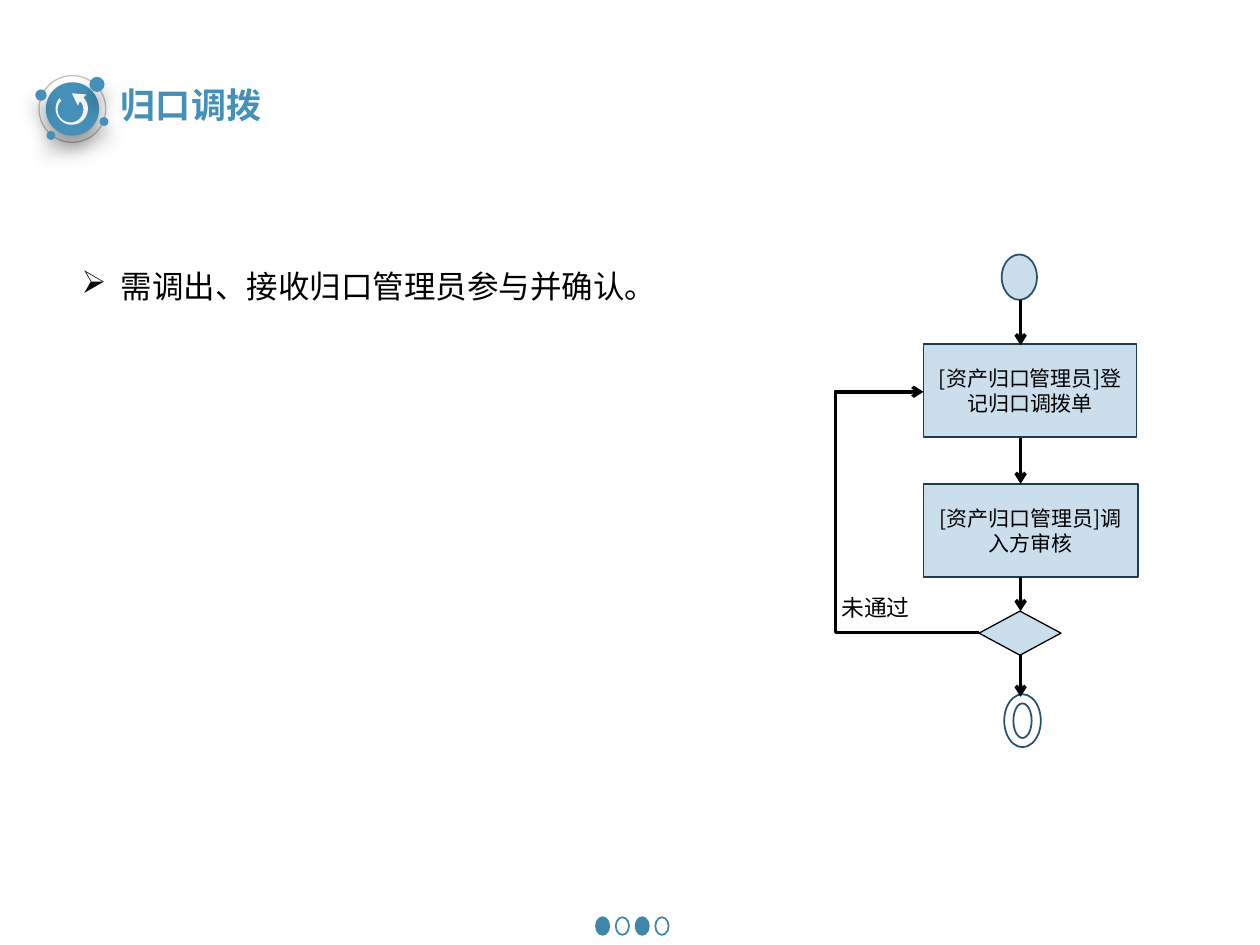
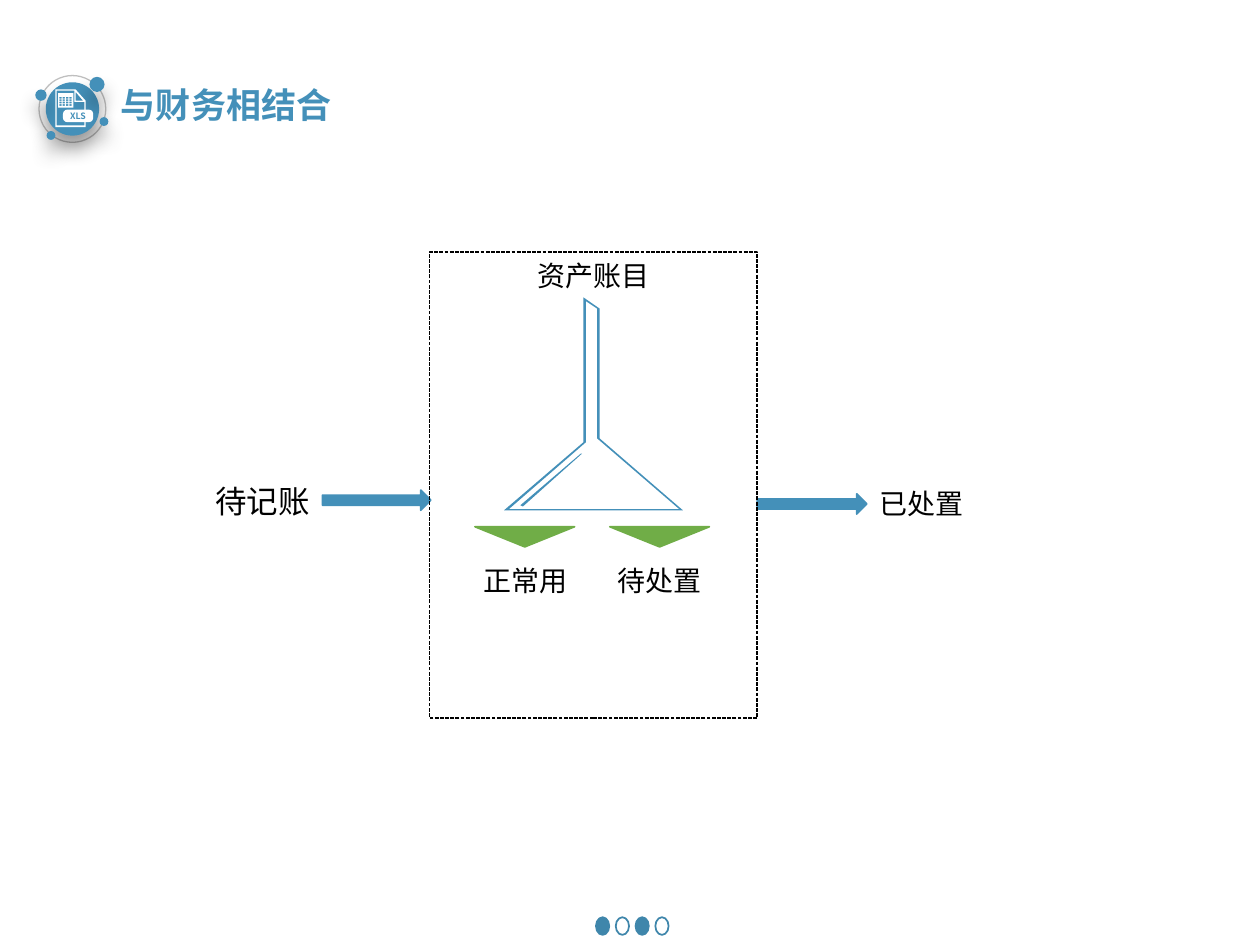
from dataclasses import dataclass
from math import cos, radians, sin

from lxml import etree
from pptx import Presentation
from pptx.dml.color import RGBColor
from pptx.enum.dml import MSO_LINE
from pptx.enum.shapes import MSO_CONNECTOR, MSO_SHAPE
from pptx.enum.text import MSO_ANCHOR, PP_ALIGN
from pptx.oxml.ns import qn
from pptx.util import Inches, Pt

COLS, ROWS = 100, 75
SLIDE_W, SLIDE_H = Inches(10), Inches(7.5)
FONT = "Noto Sans CJK SC"

BLACK = RGBColor(0x00, 0x00, 0x00)
WHITE = RGBColor(0xFF, 0xFF, 0xFF)
OFF_WHITE = RGBColor(0xF3, 0xF3, 0xF3)
GREY = RGBColor(0xBF, 0xBF, 0xBF)
BLUE = RGBColor(0x44, 0x90, 0xB9)
DOT_BLUE = RGBColor(0x3F, 0x86, 0xAB)
PALE_BLUE = RGBColor(0xCA, 0xDE, 0xEC)
NAVY = RGBColor(0x1D, 0x3B, 0x51)
STEEL = RGBColor(0x27, 0x50, 0x6E)
GREEN = RGBColor(0x70, 0xAD, 0x47)

OVAL, RECT, DIAMOND = MSO_SHAPE.OVAL, MSO_SHAPE.RECTANGLE, MSO_SHAPE.DIAMOND
DONUT, TRIANGLE = MSO_SHAPE.DONUT, MSO_SHAPE.ISOSCELES_TRIANGLE
ARROW, ROUNDED = MSO_SHAPE.RIGHT_ARROW, MSO_SHAPE.ROUNDED_RECTANGLE
STRAIGHT, ELBOW = MSO_CONNECTOR.STRAIGHT, MSO_CONNECTOR.ELBOW
LEFT, CENTER = PP_ALIGN.LEFT, PP_ALIGN.CENTER
TOP, MIDDLE = MSO_ANCHOR.TOP, MSO_ANCHOR.MIDDLE
SHORT_DASH = MSO_LINE.SQUARE_DOT

Point = tuple[float, float]


def col(n: float) -> int:
    return round(n * SLIDE_W / COLS)


def row(n: float) -> int:
    return round(n * SLIDE_H / ROWS)


@dataclass(frozen=True)
class Box:
    """A rectangle in grid columns and rows."""
    x: float
    y: float
    w: float
    h: float

    def place(self) -> tuple[int, int, int, int]:
        return col(self.x), row(self.y), col(self.w), row(self.h)

    def corners(self) -> list[Point]:
        right, bottom = self.x + self.w, self.y + self.h
        return [(self.x, self.y), (right, self.y), (right, bottom), (self.x, bottom)]


@dataclass(frozen=True)
class Label:
    text: str
    box: Box
    size: float = 16
    align: PP_ALIGN = CENTER
    wrap: bool = False


BADGE_SATELLITES = [Box(7.1, 6.1, 1.2, 1.2), Box(2.8, 7.1, 0.9, 0.9),
                    Box(3.7, 10.4, 0.7, 0.7), Box(7.9, 9.3, 0.7, 0.7)]
STEPS = [Label("[资产归口管理员]登记归口调拨单", Box(73.3, 27.3, 16.9, 7.4), 12),
         Label("[资产归口管理员]调入方审核", Box(73.3, 38.4, 17, 7.4), 12)]
STEP_ARROWS = [(23.8, 27.4), (34.8, 38.4), (45.8, 48.5), (51.9, 55.3)]
ACCOUNT_LABELS = [
    Label("待记账", Box(16.1, 37.8, 9.5, 4), 18),
    Label("已处置", Box(68.8, 38.1, 8.7, 3.7)),
    Label("资产账目", Box(41.7, 20, 12.5, 3.7), align=LEFT, wrap=True),
    Label("正常用", Box(36.7, 44.2, 10, 3.7), wrap=True),
    Label("待处置", Box(48, 44.2, 8.7, 3.7)),
]
SCALE_OUTLINE = [
    [(54.2, 40.5), (40, 40.5), (46.3, 35.1), (46.3, 23.6), (47.6, 24.5), (47.6, 34.8)],
    [(53.9, 40.4), (47.4, 34.8), (47.4, 24.5), (46.5, 23.9), (46.5, 35.1), (40.4, 40.4)],
    [(41.5, 40.2), (41.3, 40.1), (46.1, 36), (46.2, 36)],
]


def write(tf, text: str, *, size: float, color=BLACK, bold=False, align=LEFT,
          anchor=TOP, wrap=True, bullet: str = "", spacing: float = 1.0):
    tf.word_wrap = wrap
    tf.vertical_anchor = anchor
    p = tf.paragraphs[0]
    if bullet:
        pPr = p._p.get_or_add_pPr()
        pPr.set("marL", str(Inches(0.31)))
        pPr.set("indent", str(-Inches(0.31)))
        etree.SubElement(pPr, qn("a:buChar"), char=bullet)
    p.alignment = align
    p.line_spacing = spacing
    r = p.add_run()
    r.text = text
    r.font.size, r.font.bold = Pt(size), bold
    r.font.color.rgb = color
    r.font.name = FONT
    etree.SubElement(r.font._element, qn("a:ea"), typeface=FONT)


def add_label(slide, label: Label, **style):
    sp = slide.shapes.add_textbox(*label.box.place())
    write(sp.text_frame, label.text, size=label.size, align=label.align,
          wrap=label.wrap, **style)


def paint(sp, fill=None, line=None, width: float = 1):
    sp.shadow.inherit = False
    if fill is None:
        sp.fill.background()
    else:
        sp.fill.solid()
        sp.fill.fore_color.rgb = fill
    if line is None:
        sp.line.fill.background()
    else:
        sp.line.color.rgb = line
        sp.line.width = Pt(width)


def add_shape(slide, kind, box: Box, **style):
    sp = slide.shapes.add_shape(kind, *box.place())
    paint(sp, **style)
    return sp


def add_outline(slide, contours: list[list[Point]], fill):
    """Fill closed contours; a contour inside another cuts a hole."""
    paths = [[(col(x), row(y)) for x, y in contour] for contour in contours]
    builder = slide.shapes.build_freeform(*paths[0][0])
    for i, (start, *rest) in enumerate(paths):
        if i:
            builder.move_to(*start)
        builder.add_line_segments(rest, close=True)
    paint(builder.convert_to_shape(), fill=fill)


def drop_shadow(sp):
    effects = sp.element.spPr.find(qn("a:effectLst"))
    shadow = etree.SubElement(effects, qn("a:outerShdw"), blurRad=str(Pt(11)),
                              dist=str(Pt(8)), dir="5400000", algn="t", rotWithShape="0")
    color = etree.SubElement(shadow, qn("a:srgbClr"), val=str(BLACK))
    etree.SubElement(color, qn("a:alpha"), val="40000")


def add_arrow(slide, start: Point, end: Point, kind=STRAIGHT, bend: float = 0):
    """Draw a hairline arrow; bend is the elbow's place as a share of its width."""
    line = slide.shapes.add_connector(kind, col(start[0]), row(start[1]),
                                      col(end[0]), row(end[1]))
    line.line.color.rgb = BLACK
    line.line.width = Pt(0)
    spPr = line._element.spPr
    etree.SubElement(spPr.find(qn("a:ln")), qn("a:tailEnd"), type="arrow")
    etree.SubElement(spPr, qn("a:effectLst"))
    if bend:
        guides = spPr.find(qn("a:prstGeom")).find(qn("a:avLst"))
        etree.SubElement(guides, qn("a:gd"), name="adj1", fmla=f"val {round(bend * 100000)}")


def add_footer_dots(slide, layout):
    """Put the four page dots on the layout, so every slide shows them."""
    for i in range(4):
        dot = add_shape(slide, OVAL, Box(47.3 + 1.57 * i, 72.8, 1.05, 1.4),
                        fill=None if i % 2 else DOT_BLUE, line=DOT_BLUE)
        layout.shapes.element.append(dot.element)


def add_heading(slide, text: str, width: float):
    title = slide.shapes.title
    title.left, title.top, title.width, title.height = Box(8.6, 6.1, width, 4.4).place()
    write(title.text_frame, text, size=20, color=BLUE, bold=True, wrap=False)
    add_shape(slide, OVAL, Box(3.1, 6, 5.3, 5.3), line=GREY, width=0.75)
    drop_shadow(add_shape(slide, OVAL, Box(3.7, 6.6, 4.1, 4.1), fill=BLUE, line=BLUE))
    for box in BADGE_SATELLITES:
        drop_shadow(add_shape(slide, OVAL, box, fill=BLUE))


def arc(cx: float, cy: float, radius: float, start: int, end: int) -> list[Point]:
    step = 6 if end > start else -6
    return [(cx + radius * cos(radians(a)), cy + radius * sin(radians(a)))
            for a in range(start, end, step)]


def add_cycle_icon(slide):
    ring = arc(5.7, 8.62, 1.28, -43, 224) + arc(5.6, 8.7, 1.02, 223, -36)
    head = [(6.3, 8.1), (6.2, 8.4), (5.7, 7.4), (6.85, 7.5)]
    add_outline(slide, [ring + head], OFF_WHITE)


def add_sheet_icon(slide):
    page = [(4.4, 7.1), (6, 7.1), (6.8, 8), (6.8, 10.1), (4.4, 10.1)]
    inside = [(4.5, 7.2), (5.9, 7.2), (5.9, 8.1), (6.7, 8.1), (6.7, 9.95), (4.5, 9.95)]
    fold = [(6, 7.3), (6, 8), (6.6, 8)]
    table = Box(4.62, 7.4, 1.2, 1.15).corners()
    cells = [Box(4.72 + 0.26 * c, 7.7 + 0.19 * r, 0.18, 0.13).corners()
             for r in range(4) for c in range(4)]
    add_outline(slide, [page, inside, fold, table, *cells], WHITE)
    tag = add_shape(slide, ROUNDED, Box(5, 8.7, 2.4, 1), fill=WHITE)
    tag.adjustments[0] = 0.35
    tf = tag.text_frame
    tf.margin_left = tf.margin_right = tf.margin_top = tf.margin_bottom = 0
    write(tf, "XLS", size=5, color=BLUE, bold=True, align=CENTER, anchor=MIDDLE, wrap=False)


def build_transfer_slide(slide):
    add_heading(slide, "归口调拨", 13.2)
    add_cycle_icon(slide)
    note = Label("需调出、接收归口管理员参与并确认。", Box(5.5, 17.7, 58.9, 7.1), 18, LEFT, True)
    add_label(slide, note, bullet="➢", spacing=2.0)
    add_shape(slide, OVAL, Box(79.5, 20.2, 2.8, 3.6), fill=PALE_BLUE, line=STEEL)
    for step in STEPS:
        sp = add_shape(slide, RECT, step.box, fill=PALE_BLUE, line=NAVY)
        write(sp.text_frame, step.text, size=step.size, align=CENTER, anchor=MIDDLE)
    add_shape(slide, DIAMOND, Box(77.7, 48.5, 6.5, 3.5), fill=PALE_BLUE, line=BLACK, width=0.75)
    add_shape(slide, DONUT, Box(79.7, 55.1, 2.9, 4.2), line=STEEL)
    for top, bottom in STEP_ARROWS:
        add_arrow(slide, (81, top), (81, bottom))
    add_arrow(slide, (77.7, 50.2), (73.3, 31.1), ELBOW, bend=2.59)
    add_label(slide, Label("未通过", Box(65.8, 46.6, 10.1, 3.2), 13, LEFT, True))


def build_finance_slide(slide):
    add_heading(slide, "与财务相结合", 18.8)
    add_sheet_icon(slide)
    for box in (Box(25.6, 38.9, 8.6, 1.6), Box(60.1, 39.2, 8.7, 1.6)):
        add_shape(slide, ARROW, box, fill=BLUE, line=BLUE)
    add_outline(slide, SCALE_OUTLINE, BLUE)
    for x in (37.7, 48.4):
        pan = add_shape(slide, TRIANGLE, Box(x, 41.8, 7.9, 1.6), fill=GREEN, line=GREEN)
        pan.rotation = 180
    for label in ACCOUNT_LABELS:
        add_label(slide, label)
    frame = add_shape(slide, RECT, Box(34.1, 20, 26, 37), line=BLACK, width=0)
    frame.line.dash_style = SHORT_DASH


def main():
    prs = Presentation()
    prs.slide_width, prs.slide_height = SLIDE_W, SLIDE_H
    layout = prs.slide_layouts.get_by_name("Title Only")
    transfer, finance = (prs.slides.add_slide(layout) for _ in range(2))
    add_footer_dots(transfer, layout)
    build_transfer_slide(transfer)
    build_finance_slide(finance)
    prs.save("out.pptx")


if __name__ == "__main__":
    main()
